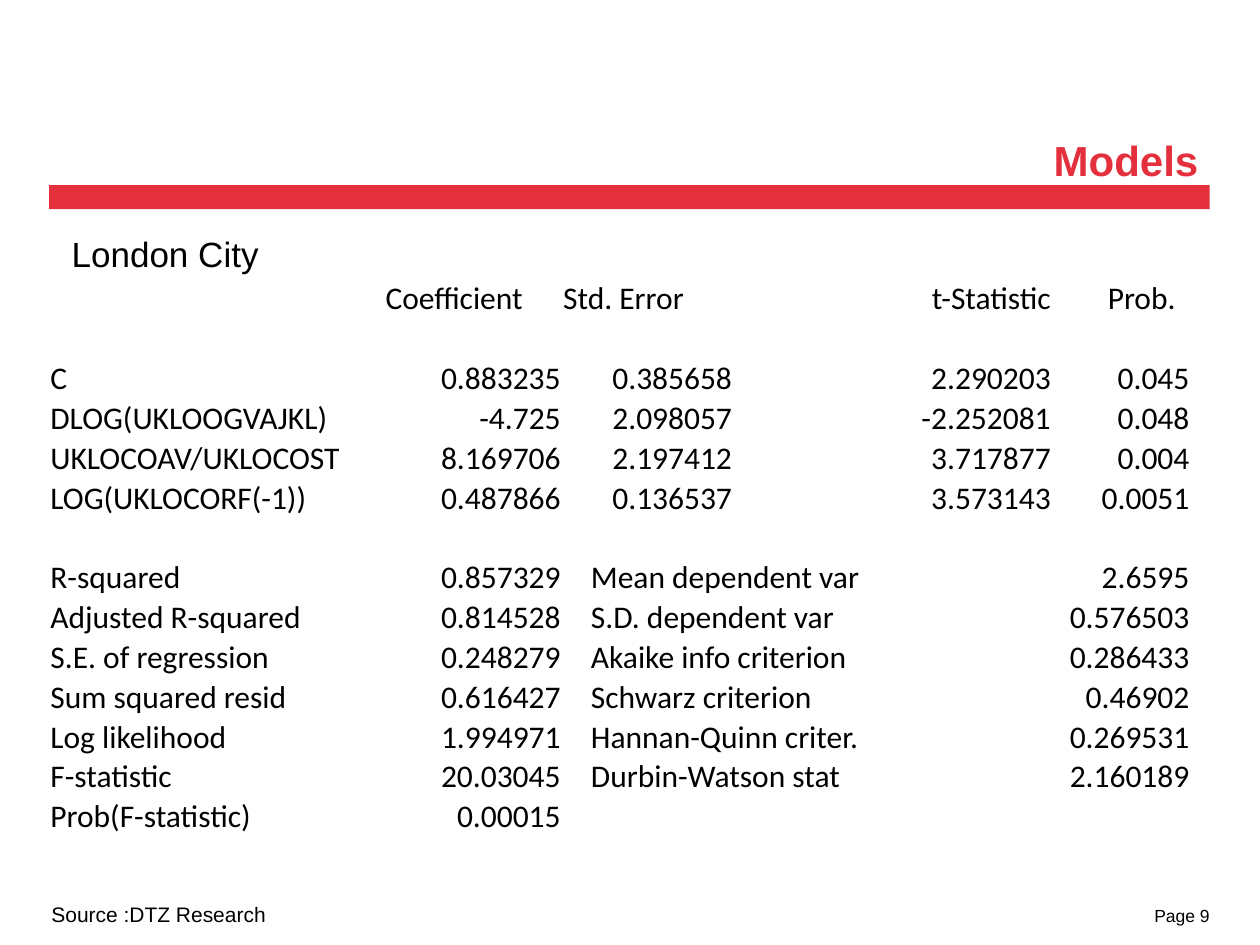
from dataclasses import dataclass

from pptx import Presentation
from pptx.dml.color import RGBColor
from pptx.enum.shapes import MSO_SHAPE
from pptx.enum.text import MSO_ANCHOR, PP_ALIGN
from pptx.slide import Slide
from pptx.table import _Cell
from pptx.util import Inches, Pt

RECTANGLE = MSO_SHAPE.RECTANGLE
BOTTOM = MSO_ANCHOR.BOTTOM
LEFT, RIGHT = PP_ALIGN.LEFT, PP_ALIGN.RIGHT

COLORS = {"accent": "E4303D", "text": "000000"}
COLUMN_WIDTHS = (2.66, 1.41, 1.36, 2.53, 1.1)
TABLE_HEIGHT = 4.43
CELL_INSET = 0.01
STATISTIC_INDENT = 0.23
PROB_INSET = 0.12
HEADINGS = ("", "Coefficient", "Std. Error", "t-Statistic", "Prob.")
COEFFICIENTS = (
    ("C", "0.883235", "0.385658", "2.290203", "0.045"),
    ("DLOG(UKLOOGVAJKL)", "-4.725", "2.098057", "-2.252081", "0.048"),
    ("UKLOCOAV/UKLOCOST", "8.169706", "2.197412", "3.717877", "0.004"),
    ("LOG(UKLOCORF(-1))", "0.487866", "0.136537", "3.573143", "0.0051"),
)
STATISTICS = (
    ("R-squared", "0.857329", "Mean dependent var", "", "2.6595"),
    ("Adjusted R-squared", "0.814528", "S.D. dependent var", "", "0.576503"),
    ("S.E. of regression", "0.248279", "Akaike info criterion", "", "0.286433"),
    ("Sum squared resid", "0.616427", "Schwarz criterion", "", "0.46902"),
    ("Log likelihood", "1.994971", "Hannan-Quinn criter.", "", "0.269531"),
    ("F-statistic", "20.03045", "Durbin-Watson stat", "", "2.160189"),
    ("Prob(F-statistic)", "0.00015", "", "", ""),
)
GAP = ("",) * len(COLUMN_WIDTHS)
ROWS = (HEADINGS, GAP, *COEFFICIENTS, GAP, *STATISTICS)


@dataclass(frozen=True)
class Label:
    text: str
    left: float
    top: float
    width: float
    height: float
    size: int
    color: str = "text"
    align: PP_ALIGN = LEFT
    bold: bool = False
    inset: bool = True


LABELS = (
    Label("Page 9", 8.47, 7.18, 1.13, 0.14, 10, align=RIGHT, inset=False),
    Label("Models", 1.41, 1.02, 8.2, 0.51, 24, "accent", RIGHT, bold=True),
    Label("Source :DTZ Research", 0.31, 7.11, 3.36, 0.3, 12),
    Label("London City", 0.47, 1.8, 8.75, 0.44, 20),
)


def format_text(paragraph, font: str, size: int, color: str, align: PP_ALIGN, bold: bool = False) -> None:
    paragraph.alignment = align
    for run in paragraph.runs:
        run.font.name = font
        run.font.size = Pt(size)
        run.font.bold = bold
        run.font.color.rgb = RGBColor.from_string(COLORS[color])


def add_label(slide: Slide, label: Label) -> None:
    box = slide.shapes.add_textbox(
        Inches(label.left), Inches(label.top), Inches(label.width), Inches(label.height)
    )
    frame = box.text_frame
    frame.word_wrap = True
    if not label.inset:
        frame.margin_left = frame.margin_right = frame.margin_top = frame.margin_bottom = 0
    frame.text = label.text
    format_text(frame.paragraphs[0], "Arial", label.size, label.color, label.align, label.bold)


def fill_cell(cell: _Cell, text: str, align: PP_ALIGN) -> None:
    cell.fill.background()
    cell.vertical_anchor = BOTTOM
    cell.margin_left = cell.margin_right = cell.margin_top = Inches(CELL_INSET)
    cell.margin_bottom = 0
    cell.text_frame.text = text
    format_text(cell.text_frame.paragraphs[0], "Calibri", 18, "text", align)


def add_results(slide: Slide) -> None:
    results = slide.shapes.add_table(
        len(ROWS), len(COLUMN_WIDTHS),
        Inches(0.39), Inches(2.21), Inches(sum(COLUMN_WIDTHS)), Inches(TABLE_HEIGHT),
    ).table
    results.first_row = results.horz_banding = False
    for column, width in zip(results.columns, COLUMN_WIDTHS):
        column.width = Inches(width)
    for row_index, values in enumerate(ROWS):
        results.rows[row_index].height = Inches(TABLE_HEIGHT / len(ROWS))
        is_statistic = values in STATISTICS and values[2] != ""
        for column_index, value in enumerate(values):
            left_columns = (0, 1, 2) if values is HEADINGS else (0, 2) if is_statistic else (0,)
            align = LEFT if column_index in left_columns else RIGHT
            fill_cell(results.cell(row_index, column_index), value, align)
        if is_statistic:
            statistic = results.cell(row_index, 2)
            statistic.merge(results.cell(row_index, 3))
            statistic.margin_left = Inches(STATISTIC_INDENT)
    results.cell(0, len(HEADINGS) - 1).margin_right = Inches(PROB_INSET)


def add_title_bar(slide: Slide) -> None:
    bar = slide.shapes.add_shape(RECTANGLE, Inches(0.39), Inches(1.47), Inches(9.21), Inches(0.19))
    bar.shadow.inherit = False
    bar.fill.solid()
    bar.fill.fore_color.rgb = RGBColor.from_string(COLORS["accent"])
    bar.line.fill.background()


def main() -> None:
    """Build the slide with the London City regression results."""
    presentation = Presentation()
    presentation.slide_width, presentation.slide_height = Inches(10), Inches(7.5)
    slide = presentation.slides.add_slide(presentation.slide_layouts[6])
    add_title_bar(slide)
    add_results(slide)
    for label in LABELS:
        add_label(slide, label)
    presentation.save("out.pptx")


if __name__ == "__main__":
    main()
